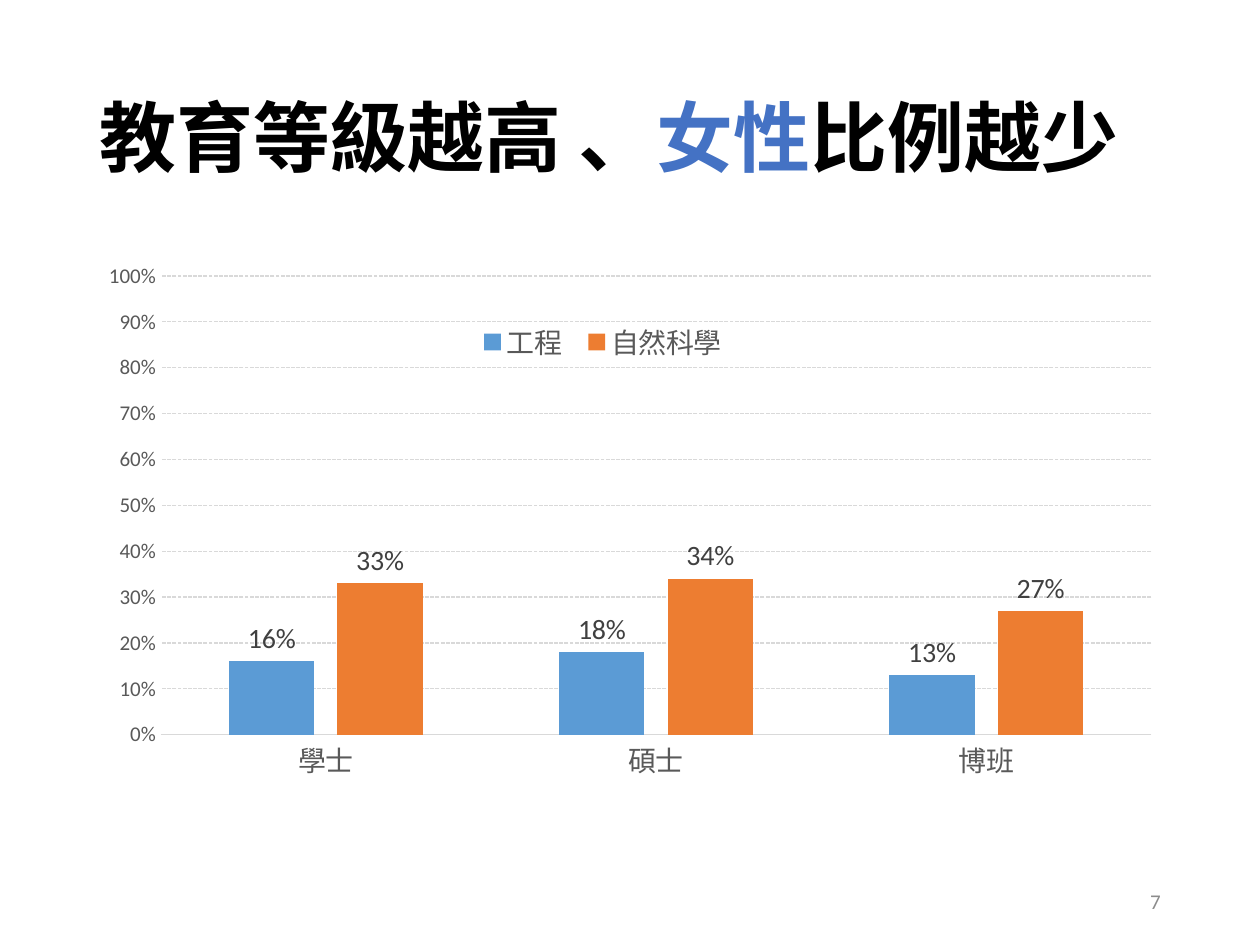
from dataclasses import dataclass

from lxml.etree import SubElement
from pptx import Presentation
from pptx.chart.data import CategoryChartData
from pptx.dml.color import RGBColor
from pptx.enum.chart import XL_CHART_TYPE, XL_LABEL_POSITION, XL_LEGEND_POSITION, XL_TICK_MARK
from pptx.enum.dml import MSO_LINE
from pptx.enum.text import MSO_ANCHOR, MSO_AUTO_SIZE, PP_ALIGN
from pptx.oxml import parse_xml
from pptx.oxml.ns import nsdecls, qn
from pptx.util import Inches, Pt


@dataclass(frozen=True)
class Theme:
    latin: str = "Calibri"
    chinese: str = "Noto Sans CJK SC"
    black: str = "000000"
    accent: str = "4472C4"
    axis_text: str = "595959"
    label_text: str = "404040"
    page_text: str = "8C8C8C"
    rule: str = "D9D9D9"
    engineering: str = "5B9BD5"
    science: str = "ED7D31"
    title_size: int = 44
    label_size: int = 16
    small_size: int = 12
    chart_size: int = 10


THEME = Theme()
LEFT, WIDTH = 0.69, 8.62


def style_font(font, size, color, name=THEME.latin, bold=False):
    font.size = Pt(size)
    font.bold = bold
    font.color.rgb = RGBColor.from_string(color)
    font.name = name
    if name == THEME.chinese:
        SubElement(font._rPr, qn("a:ea")).set("typeface", name)


def add_title(slide, parts):
    """Fill the title placeholder with (text, color) parts."""
    title = slide.shapes.title
    title.left, title.top = Inches(LEFT), Inches(0.4)
    title.width, title.height = Inches(WIDTH), Inches(1.45)
    frame = title.text_frame
    frame.auto_size = MSO_AUTO_SIZE.NONE
    frame.vertical_anchor = MSO_ANCHOR.MIDDLE
    paragraph = frame.paragraphs[0]
    paragraph.alignment = PP_ALIGN.LEFT
    paragraph.line_spacing = 0.9
    for text, color in parts:
        run = paragraph.add_run()
        run.text = text
        style_font(run.font, THEME.title_size, color, THEME.chinese, bold=True)


def add_page_number(slide, number):
    box = slide.shapes.add_textbox(Inches(7.06), Inches(6.95), Inches(2.25), Inches(0.4))
    frame = box.text_frame
    frame.word_wrap = True
    frame.vertical_anchor = MSO_ANCHOR.MIDDLE
    paragraph = frame.paragraphs[0]
    paragraph.alignment = PP_ALIGN.RIGHT
    run = paragraph.add_run()
    run.text = str(number)
    style_font(run.font, THEME.small_size, THEME.page_text)


def set_layout(parent, index, x, y, w, h, inner=False):
    """Place a chart part by fractions of the chart's size."""
    for old in parent.findall(qn("c:layout")):
        parent.remove(old)
    target = '<c:layoutTarget val="inner"/>' if inner else ""
    parent.insert(index, parse_xml(
        f'<c:layout {nsdecls("c")}><c:manualLayout>{target}'
        '<c:xMode val="edge"/><c:yMode val="edge"/>'
        f'<c:x val="{x}"/><c:y val="{y}"/><c:w val="{w}"/><c:h val="{h}"/>'
        '</c:manualLayout></c:layout>'))


def style_line(line, color):
    line.color.rgb = RGBColor.from_string(color)
    line.width = Pt(0.75)


def style_axes(chart):
    category_axis, value_axis = chart.category_axis, chart.value_axis
    for axis in (category_axis, value_axis):
        axis.major_tick_mark = axis.minor_tick_mark = XL_TICK_MARK.NONE
    style_font(category_axis.tick_labels.font, THEME.label_size, THEME.axis_text, THEME.chinese)
    style_line(category_axis.format.line, THEME.rule)

    value_axis.minimum_scale, value_axis.maximum_scale = 0, 1
    value_axis.major_unit = 0.1
    value_axis.format.line.fill.background()
    value_axis.tick_labels.number_format = "0%"
    value_axis.tick_labels.number_format_is_linked = False
    style_font(value_axis.tick_labels.font, THEME.small_size, THEME.axis_text)
    gridline = value_axis.major_gridlines.format.line
    style_line(gridline, THEME.rule)
    gridline.dash_style = MSO_LINE.SQUARE_DOT


def style_series(series, color):
    series.format.fill.solid()
    series.format.fill.fore_color.rgb = RGBColor.from_string(color)
    labels = series.data_labels
    labels.show_value = True
    labels.position = XL_LABEL_POSITION.OUTSIDE_END
    labels.number_format = "0%"
    labels.number_format_is_linked = False
    style_font(labels.font, THEME.label_size, THEME.label_text)


def add_legend(chart):
    chart.has_legend = True
    legend = chart.legend
    legend.position = XL_LEGEND_POSITION.BOTTOM
    legend.include_in_layout = False
    style_font(legend.font, THEME.label_size, THEME.axis_text, THEME.chinese)
    set_layout(legend._element, 1, 0.35, 0.11, 0.25, 0.08)


def add_share_chart(slide, categories, series_values, colors):
    data = CategoryChartData(number_format="0%")
    data.categories = categories
    for name, values in series_values.items():
        data.add_series(name, values)
    chart = slide.shapes.add_chart(
        XL_CHART_TYPE.COLUMN_CLUSTERED, Inches(LEFT), Inches(2),
        Inches(WIDTH), Inches(4.76), data).chart
    chart.has_title = False
    style_font(chart.font, THEME.chart_size, THEME.black)
    plot = chart.plots[0]
    plot.vary_by_categories = False
    plot.gap_width, plot.overlap = 160, -27
    style_axes(chart)
    for series, color in zip(plot.series, colors):
        style_series(series, color)
    add_legend(chart)
    plot_area = chart._chartSpace.chart.plotArea
    set_layout(plot_area, 0, 0.068, 0.04, 0.912, 0.765, inner=True)


def main():
    presentation = Presentation()
    presentation.slide_width, presentation.slide_height = Inches(10), Inches(7.5)
    slide = presentation.slides.add_slide(presentation.slide_layouts[5])
    add_title(slide, [("教育等級越高 、", THEME.black), ("女性", THEME.accent),
                      ("比例越少", THEME.black)])
    add_share_chart(
        slide, ["學士", "碩士", "博班"],
        {"工程": (0.16, 0.18, 0.13), "自然科學": (0.33, 0.34, 0.27)},
        [THEME.engineering, THEME.science])
    add_page_number(slide, 7)
    presentation.save("out.pptx")


if __name__ == "__main__":
    main()
